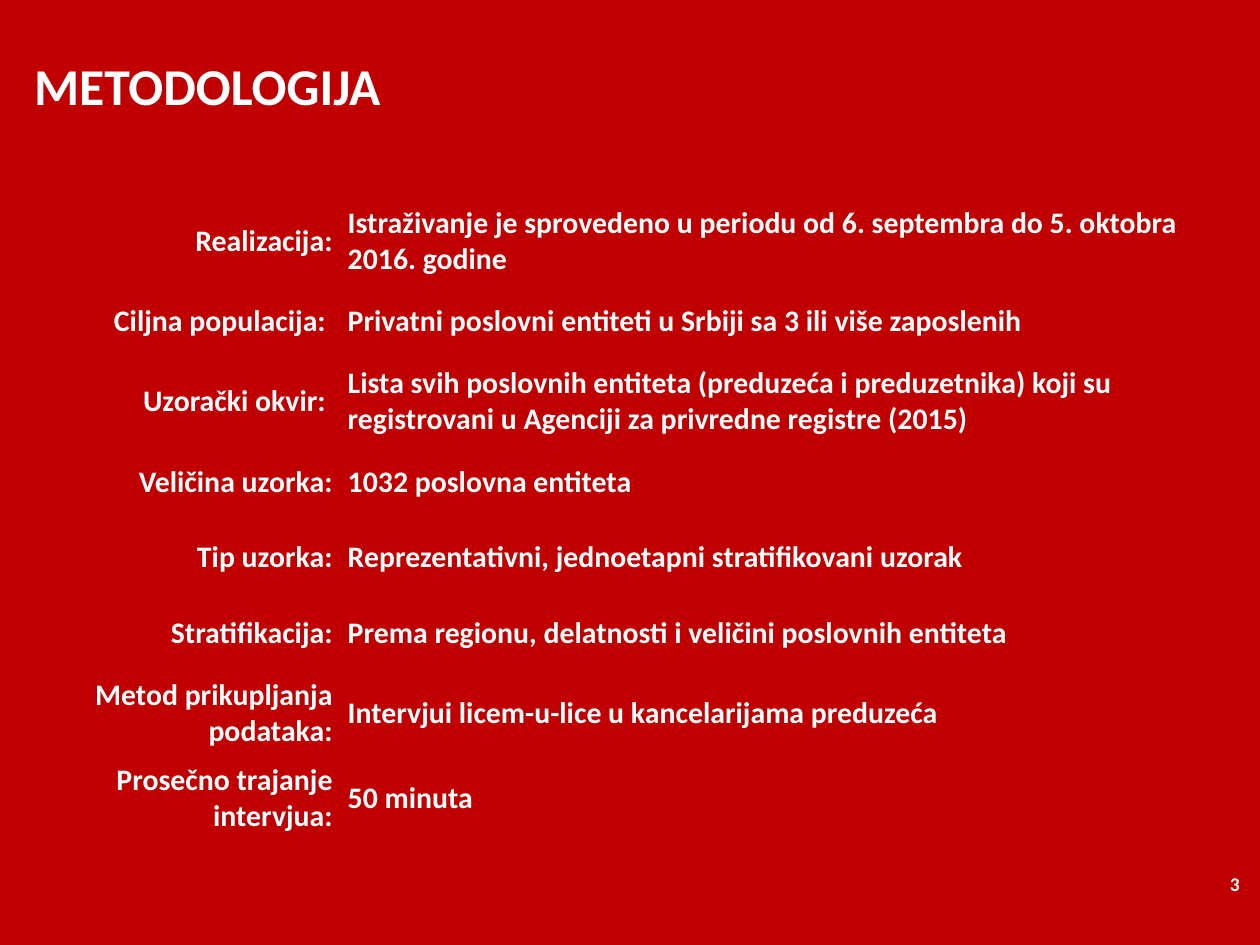
from pptx import Presentation
from pptx.dml.color import RGBColor
from pptx.enum.text import MSO_ANCHOR, MSO_AUTO_SIZE, PP_ALIGN
from pptx.util import Inches, Pt

MIDDLE, BOTTOM = MSO_ANCHOR.MIDDLE, MSO_ANCHOR.BOTTOM
LEFT, RIGHT = PP_ALIGN.LEFT, PP_ALIGN.RIGHT
NO_AUTOFIT = MSO_AUTO_SIZE.NONE
NO_STYLE = "{2D5ABB26-0587-4C30-8999-92F81FD0307C}"
RED, WHITE = "C00000", "FFFFFF"
W, H = 10, 7.5
MARGIN = 0.027 * W
SHORT, TALL = 0.08 * H, 0.09 * H


def color(fmt, value):
    fmt.rgb = RGBColor.from_string(value)


def add_run(p, text, size, align):
    p.alignment = align
    r = p.add_run()
    r.text = text
    r.font.name = "Calibri"
    r.font.size = Pt(size)
    r.font.bold = True
    color(r.font.color, WHITE)


prs = Presentation()
prs.slide_width, prs.slide_height = Inches(W), Inches(H)
s = prs.slides.add_slide(prs.slide_layouts[5])
s.background.fill.solid()
color(s.background.fill.fore_color, RED)

title = s.shapes.title
title.left, title.top = Inches(MARGIN), Inches(0.052 * H)
title.width, title.height = Inches(0.957 * W), Inches(0.083 * H)
number = s.shapes.add_textbox(
    Inches(0.976 * W), Inches(0.923 * H), Inches(0.008 * W), Inches(0.025 * H))

for sp, text, size, align, anchor, wrap in [
    (title, "METODOLOGIJA", 29.5, LEFT, MIDDLE, True),
    (number, "3", 11.1, RIGHT, BOTTOM, False),
]:
    tf = sp.text_frame
    tf.margin_left = tf.margin_right = tf.margin_top = tf.margin_bottom = 0
    tf.vertical_anchor = anchor
    tf.word_wrap = wrap
    tf.auto_size = NO_AUTOFIT
    add_run(tf.paragraphs[0], text, size, align)
title.text_frame.paragraphs[0].line_spacing = 0.9

rows = [
    ("Realizacija:", "Istraživanje je sprovedeno u periodu od 6. septembra do 5. oktobra 2016. godine", TALL),
    ("Ciljna populacija: ", "Privatni poslovni entiteti u Srbiji sa 3 ili više zaposlenih", SHORT),
    ("Uzorački okvir: ", "Lista svih poslovnih entiteta (preduzeća i preduzetnika) koji su registrovani u Agenciji za privredne registre (2015)", TALL),
    ("Veličina uzorka:", "1032 poslovna entiteta", SHORT),
    ("Tip uzorka:", "Reprezentativni, jednoetapni stratifikovani uzorak", SHORT),
    ("Stratifikacija:", "Prema regionu, delatnosti i veličini poslovnih entiteta", SHORT),
    ("Metod prikupljanja podataka:", "Intervjui licem-u-lice u kancelarijama preduzeća", TALL),
    ("Prosečno trajanje intervjua:", "50 minuta", TALL),
]
cols = [0.243 * W, 0.702 * W]
frame = s.shapes.add_table(
    len(rows), len(cols), Inches(MARGIN), Inches(0.21 * H),
    Inches(sum(cols)), Inches(sum(row[2] for row in rows)))
table = frame.table
table.first_row = table.horz_banding = False
table._tbl.tblPr.find("{*}tableStyleId").text = NO_STYLE
for col, width in zip(table.columns, cols):
    col.width = Inches(width)

for i, (label, value, height) in enumerate(rows):
    table.rows[i].height = Inches(height)
    for j, (text, align) in enumerate([(label, RIGHT), (value, LEFT)]):
        cell = table.cell(i, j)
        cell.fill.background()
        cell.vertical_anchor = MIDDLE
        cell.margin_left = cell.margin_right = Inches(0.06)
        cell.margin_top = cell.margin_bottom = 0
        p = cell.text_frame.paragraphs[0]
        add_run(p, text, 17, align)
        if align == RIGHT:
            p._p.get_or_add_pPr().set("marL", str(Inches(0.25)))

p = table.cell(6, 1).text_frame.paragraphs[0]
p.space_before, p.space_after = Pt(12), Pt(3)

prs.save("out.pptx")
